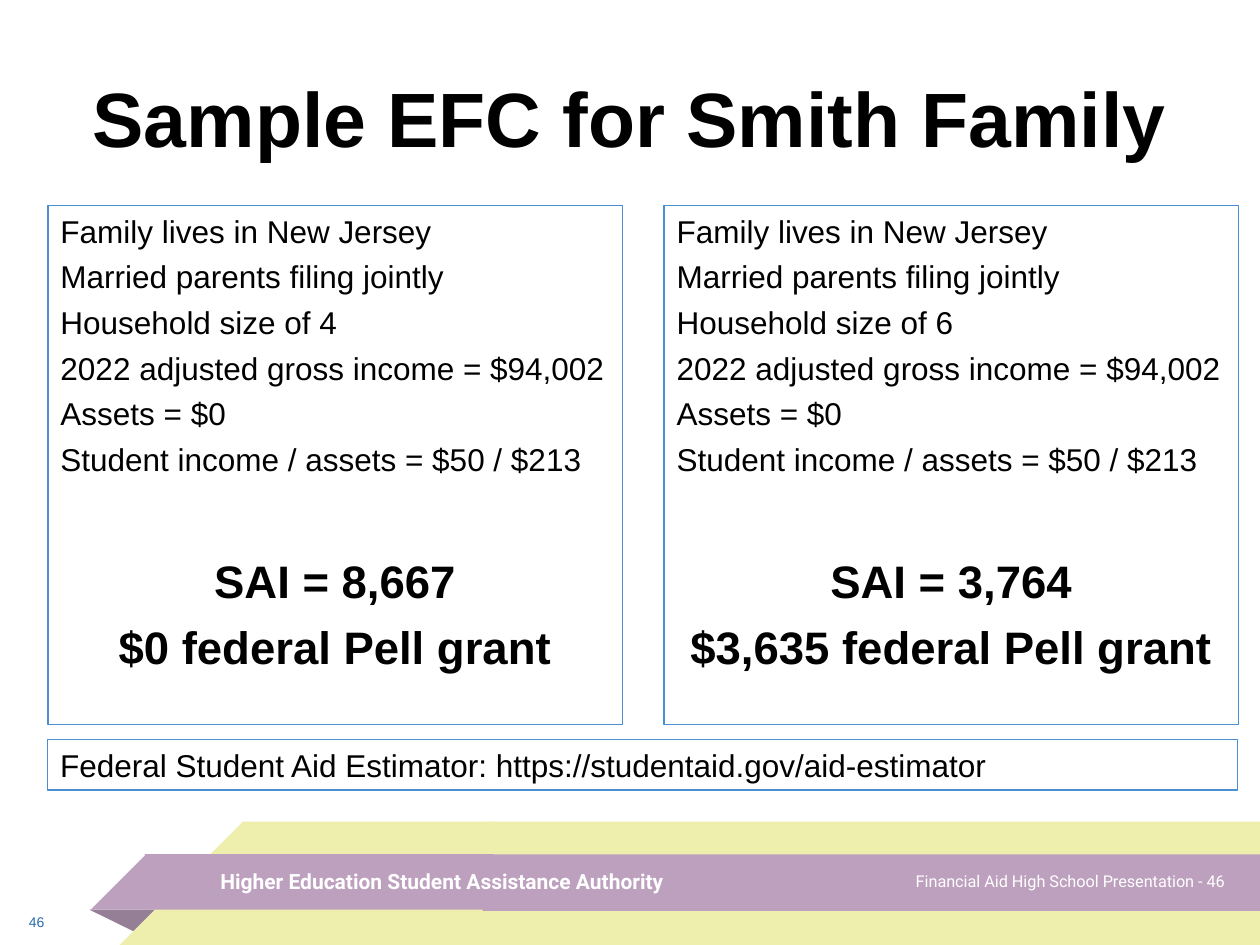
import pptx
import pptx.dml.color
import pptx.enum.shapes
import pptx.enum.text
import pptx.util
from lxml import etree
from pptx.util import Inches

SHAPE = pptx.enum.shapes.MSO_SHAPE
ALIGN = pptx.enum.text.PP_ALIGN
ANCHOR = pptx.enum.text.MSO_ANCHOR
YELLOW, MAUVE, SHADE = "EEEFAC", "BD9FBE", "957F97"
BLUE, WHITE, BLACK = "498FD2", "FFFFFF", "000000"


def color(hex_value):
    return pptx.dml.color.RGBColor.from_string(hex_value)


class SlideBuilder:
    def __init__(self, slide, font="Arial"):
        self.slide = slide
        self.font = font

    def place(self, shape, box):
        shape.left, shape.top, shape.width, shape.height = map(Inches, box)

    def style(self, paragraph, size, ink=BLACK, bold=False, font=None, align=ALIGN.LEFT):
        paragraph.alignment = align
        paragraph.font.name = font or self.font
        paragraph.font.size = pptx.util.Pt(size)
        paragraph.font.bold = bold
        paragraph.font.color.rgb = color(ink)

    def outline(self, shape):
        shape.line.color.rgb = color(BLUE)
        shape.line.width = pptx.util.Pt(0.75)

    def block(self, kind, box, fill, flip=False):
        block = self.slide.shapes.add_shape(kind, *map(Inches, box))
        block.shadow.inherit = False
        block.fill.solid()
        block.fill.fore_color.rgb = color(fill)
        block.line.fill.background()
        if flip:
            block.element.spPr.xfrm.set("flipH", "1")
        return block

    def label(self, text, box, size, **style):
        label = self.slide.shapes.add_textbox(*map(Inches, box))
        frame = label.text_frame
        frame.word_wrap = True
        frame.vertical_anchor = ANCHOR.MIDDLE
        frame.text = text
        self.style(frame.paragraphs[0], size, **style)

    def title(self, text, box):
        title = self.slide.shapes.title
        self.place(title, box)
        title.text_frame.text = text
        title.text_frame.vertical_anchor = ANCHOR.MIDDLE
        self.style(title.text_frame.paragraphs[0], 44, bold=True, align=ALIGN.CENTER)

    def panel(self, body, box, facts, results):
        self.place(body, box)
        self.outline(body)
        frame = body.text_frame
        frame.auto_size = pptx.enum.text.MSO_AUTO_SIZE.NONE
        frame.vertical_anchor = ANCHOR.TOP
        frame.text = "\n".join(facts + results)
        for index, paragraph in enumerate(frame.paragraphs):
            is_fact = index < len(facts)
            if is_fact:
                self.style(paragraph, 18)
                gap = 4.5
            else:
                self.style(paragraph, 26, bold=True, align=ALIGN.CENTER)
                gap = 43 if index == len(facts) else 6.5
            paragraph.space_before = pptx.util.Pt(gap)
            properties = paragraph._p.get_or_add_pPr()
            properties.set("marL", "0")
            properties.set("indent", "0")
            etree.SubElement(properties, pptx.oxml.ns.qn("a:buNone"))
            properties.append(properties.find(pptx.oxml.ns.qn("a:defRPr")))

    def note(self, text, box):
        note = self.block(SHAPE.RECTANGLE, box, WHITE)
        self.outline(note)
        note.text_frame.word_wrap = True
        note.text_frame.vertical_anchor = ANCHOR.TOP
        note.text_frame.text = text
        self.style(note.text_frame.paragraphs[0], 18)


def draw_ribbon(builder):
    builder.block(SHAPE.RECTANGLE, (3.88, 6.52, 6.12, 0.98), YELLOW)
    fold = builder.block(SHAPE.ISOSCELES_TRIANGLE, (0.71, 7.22, 0.57, 0.19), SHADE)
    fold.rotation = 180
    fold.adjustments[0] = 0.32
    for left, top, height, fill in ((0.95, 6.52, 0.98, YELLOW), (0.72, 6.78, 0.44, MAUVE)):
        body_left = left + height - 0.01
        builder.block(SHAPE.RECTANGLE, (body_left, top, 3.92 - body_left, height), fill)
        builder.block(SHAPE.RIGHT_TRIANGLE, (left, top, height, height), fill, flip=True)
    builder.block(SHAPE.RECTANGLE, (3.83, 6.78, 6.17, 0.45), MAUVE)
    builder.label("Higher Education Student Assistance Authority", (1.65, 6.79, 4.32, 0.4),
                  12, ink=WHITE, bold=True, font="Roboto")
    builder.label("46", (0.13, 7.12, 0.45, 0.4), 8, ink="2A6CAA")
    builder.label("Financial Aid High School Presentation - 46", (6.82, 6.79, 3, 0.4),
                  9.3, ink=WHITE, font="Roboto", align=ALIGN.RIGHT)


def main():
    deck = pptx.Presentation()
    deck.slide_width, deck.slide_height = Inches(10), Inches(7.5)
    slide = deck.slides.add_slide(deck.slide_layouts.get_by_name("Two Content"))
    builder = SlideBuilder(slide)
    draw_ribbon(builder)
    builder.title("Sample EFC for Smith Family", (0.5, 0.3, 9, 1.25))
    families = (
        (1, 0.38, 4, "8,667", "$0"),
        (2, 5.27, 6, "3,764", "$3,635"),
    )
    for placeholder, left, household, sai, grant in families:
        facts = [
            "Family lives in New Jersey",
            "Married parents filing jointly",
            f"Household size of {household}",
            "2022 adjusted gross income = $94,002",
            "Assets = $0",
            "Student income / assets = $50 / $213",
        ]
        results = [f"SAI = {sai}", f"{grant} federal Pell grant"]
        builder.panel(slide.placeholders[placeholder], (left, 1.63, 4.56, 4.12), facts, results)
    builder.note("Federal Student Aid Estimator: https://studentaid.gov/aid-estimator",
                 (0.38, 5.87, 9.44, 0.4))
    deck.save("out.pptx")


if __name__ == "__main__":
    main()
